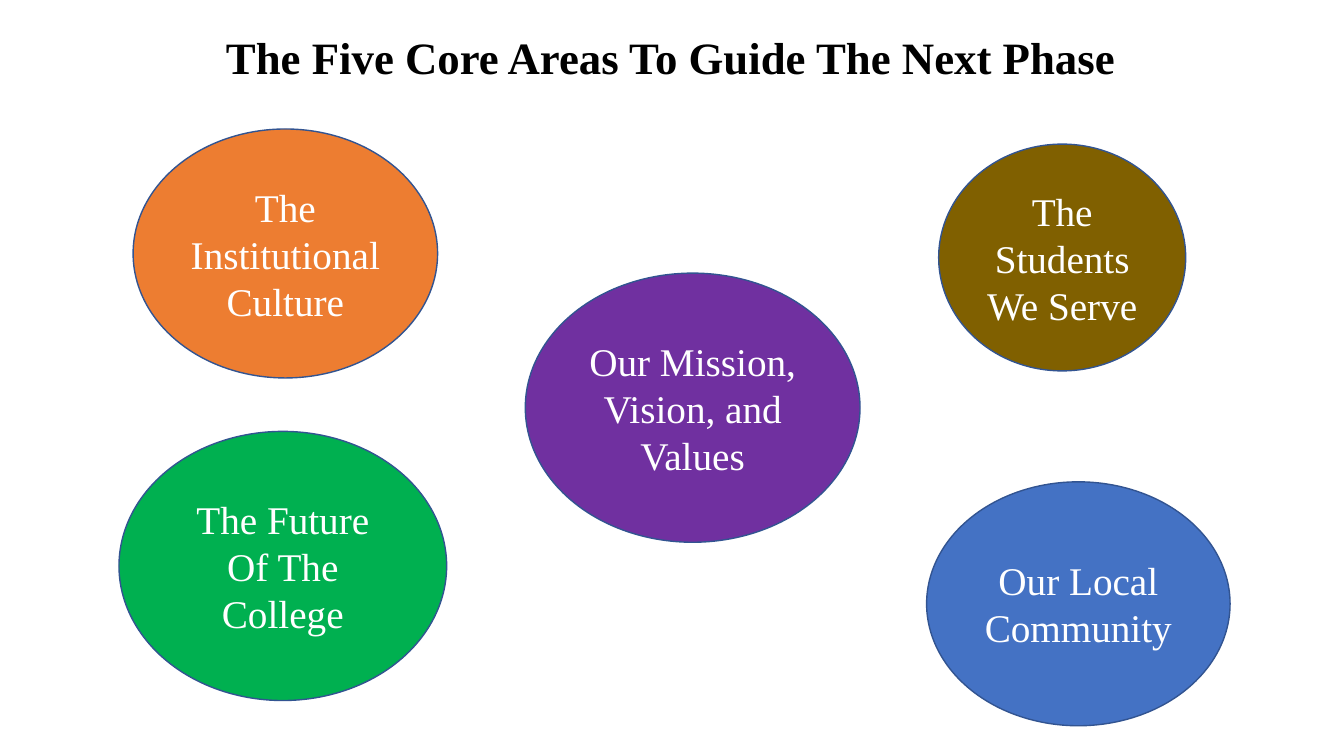
from dataclasses import dataclass

from pptx import Presentation
from pptx.dml.color import RGBColor
from pptx.enum.shapes import MSO_SHAPE as SHAPE
from pptx.enum.text import MSO_ANCHOR as ANCHOR, PP_ALIGN as ALIGN
from pptx.slide import Slide
from pptx.text.text import TextFrame
from pptx.util import Emu, Pt

EMU_PER_PX = 9144  # 100 px to the inch
FONT = "Times New Roman"
OUTLINE = "325491"


@dataclass
class CoreArea:
    text: str
    fill: str
    left: int
    top: int
    width: int
    height: int


CORE_AREAS = [
    CoreArea("The Institutional Culture", "ED7D31", 132, 128, 302, 247),
    CoreArea("Our Mission, Vision, and Values", "7030A0", 521, 271, 332, 267),
    CoreArea("The Students We Serve", "806000", 931, 143, 245, 225),
    CoreArea("The Future Of The College", "00B050", 118, 428, 325, 267),
    CoreArea("Our Local Community", "4472C4", 919, 478, 301, 242),
]


def px(n: int) -> Emu:
    return Emu(n * EMU_PER_PX)


def rgb(color: str) -> RGBColor:
    return RGBColor.from_string(color)


def write_centred(tf: TextFrame, text: str, size: int, color: str,
                  bold: bool = False, line_spacing: float = 1.0) -> None:
    tf.word_wrap = True
    tf.vertical_anchor = ANCHOR.MIDDLE
    p = tf.paragraphs[0]
    p.alignment = ALIGN.CENTER
    p.line_spacing = line_spacing
    r = p.add_run()
    r.text = text
    r.font.name = FONT
    r.font.size = Pt(size)
    r.font.bold = bold
    r.font.color.rgb = rgb(color)


def add_title(s: Slide, text: str) -> None:
    title = s.shapes.title
    title.left, title.top = px(96), px(6)
    title.width, title.height = px(1150), px(108)
    write_centred(title.text_frame, text, 32, "000000", bold=True, line_spacing=0.9)


def add_core_area(s: Slide, area: CoreArea) -> None:
    sp = s.shapes.add_shape(SHAPE.OVAL, px(area.left), px(area.top),
                            px(area.width), px(area.height))
    sp.shadow.inherit = False
    sp.fill.solid()
    sp.fill.fore_color.rgb = rgb(area.fill)
    sp.line.color.rgb = rgb(OUTLINE)
    sp.line.width = Pt(1)
    write_centred(sp.text_frame, area.text, 28, "FFFFFF")


def main() -> None:
    prs = Presentation()
    prs.slide_width, prs.slide_height = px(1333), px(750)
    s = prs.slides.add_slide(prs.slide_layouts[5])  # title only
    s.background.fill.solid()
    s.background.fill.fore_color.rgb = rgb("FFFFFF")
    add_title(s, "The Five Core Areas To Guide The Next Phase ")
    for area in CORE_AREAS:
        add_core_area(s, area)
    prs.save("out.pptx")


if __name__ == "__main__":
    main()
